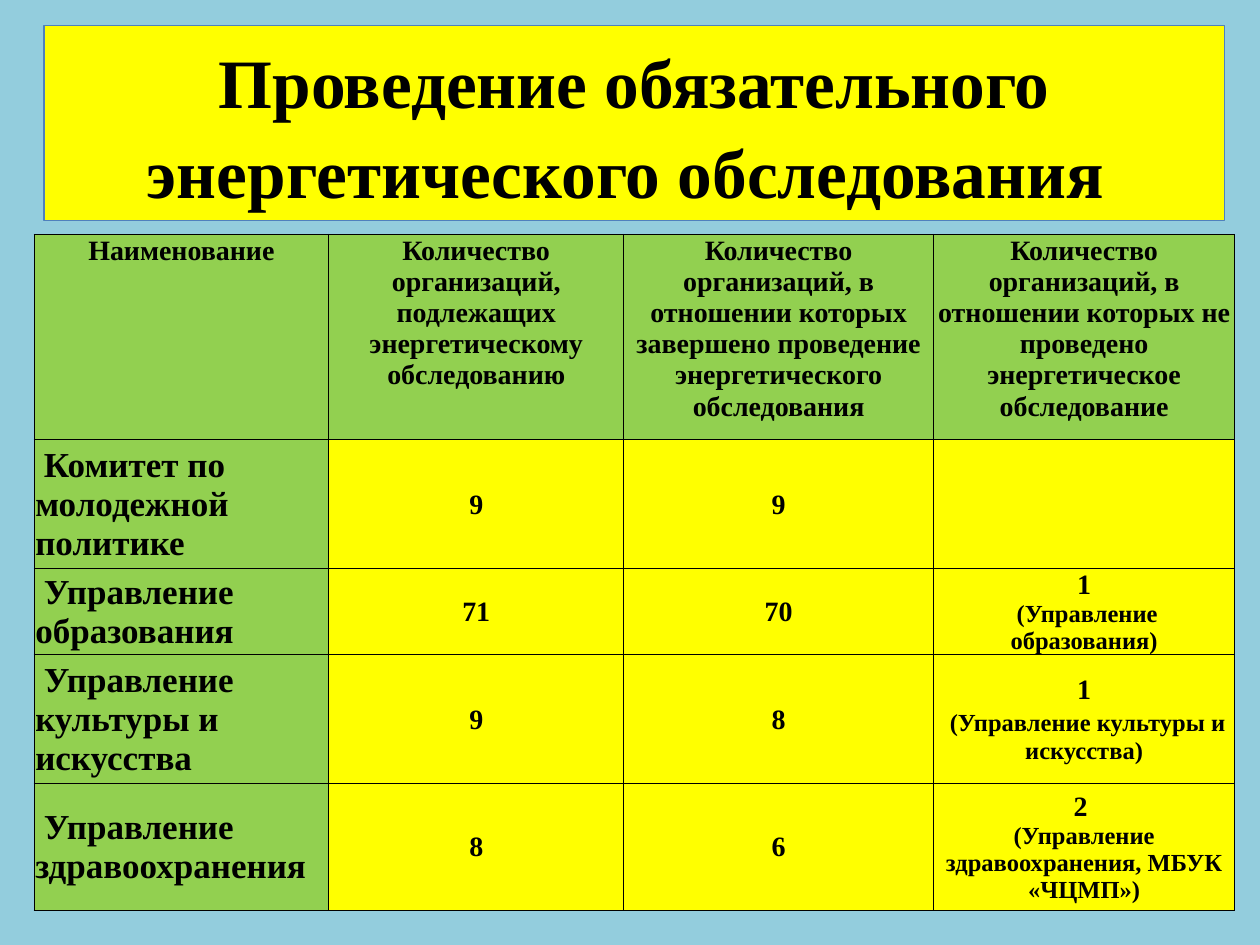
from lxml.etree import SubElement
from pptx import Presentation
from pptx.dml.color import RGBColor
from pptx.enum.text import MSO_ANCHOR, MSO_AUTO_SIZE, PP_ALIGN
from pptx.oxml.ns import qn
from pptx.util import Inches, Pt

FONT = "Times New Roman"
BLACK, YELLOW, GREEN = "000000", "FFFF00", "92D050"
BACKGROUND, TITLE_LINE = "93CDDD", "4F81BD"
HEADER_SIZE, NAME_SIZE, COUNT_SIZE, NOTE_SIZE = 16, 20, 16, 14

TITLE = "Проведение обязательного энергетического обследования "
COLUMN_WIDTHS = [2.34, 2.34, 2.46, 2.39]
ROW_HEIGHTS = [1.63, 1.02, 0.68, 1.02, 1.01]
HEADERS = [
    "Наименование",
    "Количество организаций, подлежащих энергетическому обследованию",
    "Количество организаций, в отношении которых завершено проведение "
    "энергетического обследования",
    "Количество организаций, в отношении которых не проведено "
    "энергетическое обследование",
]
# Name, organizations due, completed, then the lines on those not surveyed:
# each line is a list of (text, size) runs.
DEPARTMENTS = [
    (" Комитет по молодежной политике", "9", "9", []),
    (" Управление образования", "71", "70",
     [[("1", COUNT_SIZE)], [(" (Управление образования)", NOTE_SIZE)]]),
    (" Управление культуры и искусства", "9", "8",
     [[("1", COUNT_SIZE)],
      [(" ", COUNT_SIZE), ("(Управление культуры и искусства)", NOTE_SIZE)]]),
    (" Управление здравоохранения", "8", "6",
     [[("2 ", COUNT_SIZE)],
      [("(Управление здравоохранения, МБУК «ЧЦМП»)", NOTE_SIZE)]]),
]


def color(hex_code):
    return RGBColor.from_string(hex_code)


def paint(fill, hex_code):
    fill.solid()
    fill.fore_color.rgb = color(hex_code)


def write_lines(frame, lines, align):
    """Write each line, a list of (text, size) runs, as a paragraph."""
    for index, line in enumerate(lines):
        paragraph = frame.paragraphs[0] if index == 0 else frame.add_paragraph()
        paragraph.alignment = align
        for text, size in line:
            run = paragraph.add_run()
            run.text = text
            run.font.name = FONT
            run.font.size = Pt(size)
            run.font.bold = True
            run.font.color.rgb = color(BLACK)


def add_borders(cell):
    properties = cell._tc.get_or_add_tcPr()
    for side in ("a:lnL", "a:lnR", "a:lnT", "a:lnB"):
        line = SubElement(properties, qn(side), w=str(Pt(0.5)))
        SubElement(SubElement(line, qn("a:solidFill")), qn("a:srgbClr"), val=BLACK)


def format_cell(cell, lines, fill, align=PP_ALIGN.CENTER, anchor=MSO_ANCHOR.MIDDLE):
    cell.margin_left = cell.margin_right = cell.margin_top = Inches(0.01)
    cell.margin_bottom = 0
    cell.vertical_anchor = anchor
    add_borders(cell)
    paint(cell.fill, fill)
    write_lines(cell.text_frame, lines, align)


def format_title(title):
    title.left, title.top = Inches(0.35), Inches(0.2)
    title.width, title.height = Inches(9.37), Inches(1.55)
    paint(title.fill, YELLOW)
    title.line.color.rgb = color(TITLE_LINE)
    title.line.width = Pt(0.75)
    frame = title.text_frame
    frame.auto_size = MSO_AUTO_SIZE.NONE
    frame.word_wrap = True
    frame.vertical_anchor = MSO_ANCHOR.MIDDLE
    write_lines(frame, [[(TITLE, 39.6)]], PP_ALIGN.CENTER)
    frame.paragraphs[0].line_spacing = 1.08


def add_survey_table(slide):
    table = slide.shapes.add_table(
        len(ROW_HEIGHTS), len(COLUMN_WIDTHS), Inches(0.27), Inches(1.86),
        Inches(sum(COLUMN_WIDTHS)), Inches(sum(ROW_HEIGHTS))).table
    for column, width in zip(table.columns, COLUMN_WIDTHS):
        column.width = Inches(width)
    for row, height in zip(table.rows, ROW_HEIGHTS):
        row.height = Inches(height)

    for index, header in enumerate(HEADERS):
        format_cell(table.cell(0, index), [[(header, HEADER_SIZE)]], GREEN,
                    anchor=MSO_ANCHOR.TOP)
    for row, (name, due, completed, missing) in enumerate(DEPARTMENTS, start=1):
        format_cell(table.cell(row, 0), [[(name, NAME_SIZE)]], GREEN, PP_ALIGN.LEFT)
        format_cell(table.cell(row, 1), [[(due, COUNT_SIZE)]], YELLOW)
        format_cell(table.cell(row, 2), [[(completed, COUNT_SIZE)]], YELLOW)
        format_cell(table.cell(row, 3), missing, YELLOW)


def main():
    presentation = Presentation()
    presentation.slide_width, presentation.slide_height = Inches(10), Inches(7.5)
    slide = presentation.slides.add_slide(presentation.slide_layouts[5])
    paint(slide.background.fill, BACKGROUND)
    format_title(slide.shapes.title)
    add_survey_table(slide)
    presentation.save("out.pptx")


if __name__ == "__main__":
    main()
